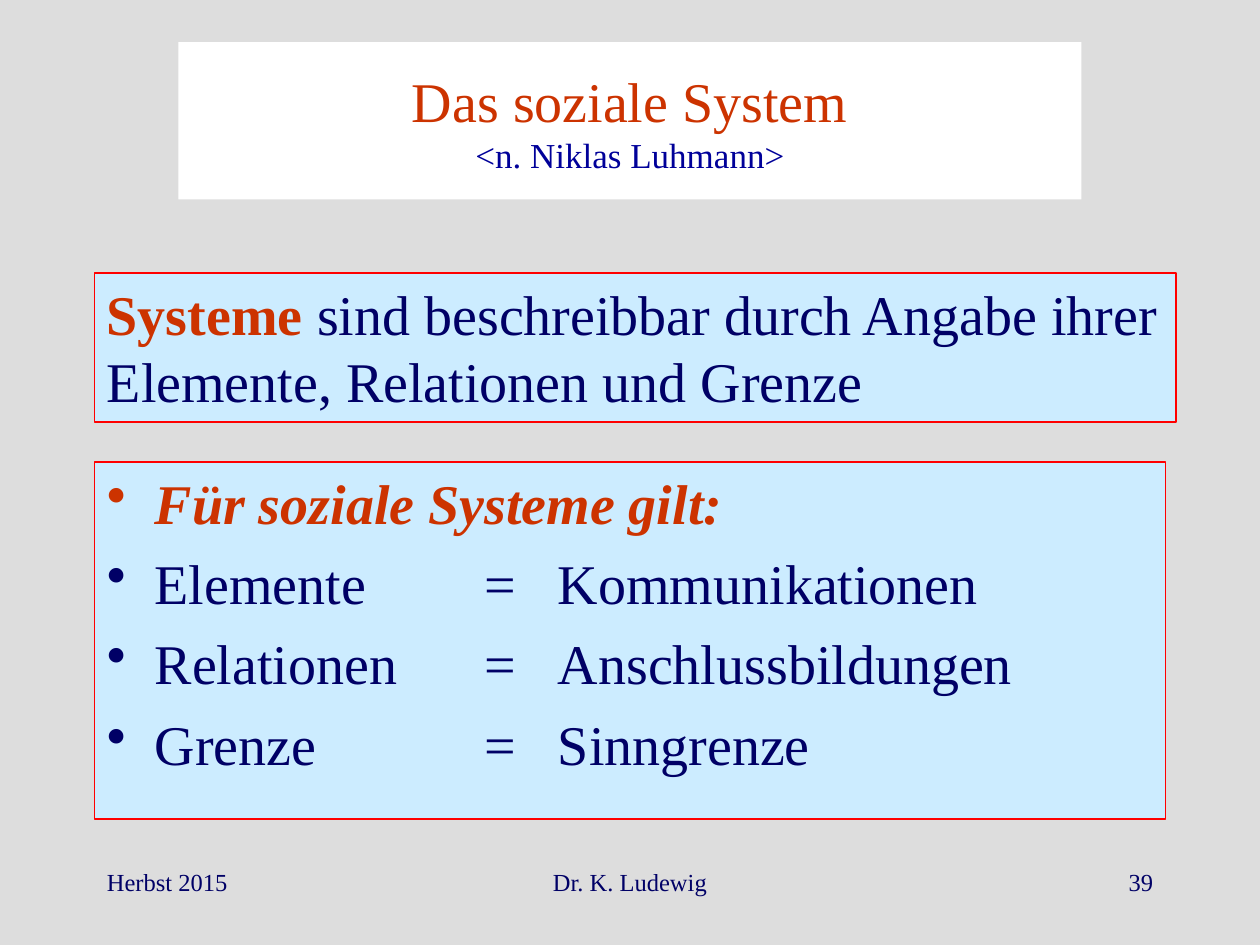
from lxml import etree
from pptx import Presentation
from pptx import util as u
from pptx.dml.color import RGBColor
from pptx.enum import shapes, text
from pptx.oxml.ns import qn

FONT = "Times New Roman"
GREY = RGBColor(0xDD, 0xDD, 0xDD)
WHITE = RGBColor(0xFF, 0xFF, 0xFF)
PALE_BLUE = RGBColor(0xCC, 0xEC, 0xFF)
RED = RGBColor(0xFF, 0x00, 0x00)
RUST = RGBColor(0xCC, 0x33, 0x00)
NAVY = RGBColor(0x00, 0x00, 0x66)
BLUE = RGBColor(0x00, 0x00, 0x99)

WIDTH, HEIGHT = 10, 7.5
COLUMN, ROW = WIDTH / 120, HEIGHT / 45  # layout grid, in inches

ALIGN = text.PP_ALIGN
HANGING = 0.38
TAB_STOPS = (3, 3.58)
RELATIONS = (
    ("Elemente", "Kommunikationen"),
    ("Relationen", "Anschlussbildungen"),
    ("Grenze", "Sinngrenze"),
)


def grid_box(left, top, columns, rows):
    return (u.Inches(left * COLUMN), u.Inches(top * ROW),
            u.Inches(columns * COLUMN), u.Inches(rows * ROW))


def style(font, size, color):
    font.name = FONT
    font.size = u.Pt(size)
    font.color.rgb = color


def add_panel(slide, box, fill, line=None, anchor=text.MSO_ANCHOR.TOP):
    """Add a filled rectangle and return its text frame."""
    shape = slide.shapes.add_shape(shapes.MSO_SHAPE.RECTANGLE, *box)
    shape.shadow.inherit = False
    shape.fill.solid()
    shape.fill.fore_color.rgb = fill
    if line is None:
        shape.line.fill.background()
    else:
        shape.line.color.rgb = line
        shape.line.width = u.Pt(0.75)
    frame = shape.text_frame
    frame.word_wrap = True
    frame.vertical_anchor = anchor
    return frame


def make_bullet(paragraph):
    """Give a paragraph a hanging bullet and the tab stops of the list."""
    properties = paragraph._p.get_or_add_pPr()
    properties.set("marL", str(u.Inches(HANGING)))
    properties.set("indent", str(-u.Inches(HANGING)))
    etree.SubElement(properties, qn("a:buChar"), char="•")
    tabs = etree.SubElement(properties, qn("a:tabLst"))
    for stop in TAB_STOPS:
        etree.SubElement(tabs, qn("a:tab"), pos=str(u.Inches(stop)), algn="l")


def add_title(slide, box):
    frame = add_panel(slide, box, WHITE, anchor=text.MSO_ANCHOR.MIDDLE)
    paragraph = frame.paragraphs[0]
    paragraph.alignment = ALIGN.CENTER
    heading = paragraph.add_run()
    heading.text = "Das soziale System"
    style(heading.font, 32, RUST)
    paragraph.add_line_break()
    source = paragraph.add_run()
    source.text = "<n. Niklas Luhmann>"
    style(source.font, 20, BLUE)


def add_definition(slide, box):
    paragraph = add_panel(slide, box, PALE_BLUE, RED).paragraphs[0]
    paragraph.alignment = ALIGN.LEFT
    term = paragraph.add_run()
    term.text = "Systeme "
    style(term.font, 32, RUST)
    term.font.bold = True
    rest = paragraph.add_run()
    rest.text = ("sind beschreibbar durch Angabe ihrer "
                 "Elemente, Relationen und Grenze")
    style(rest.font, 32, NAVY)


def add_relations(slide, box):
    frame = add_panel(slide, box, PALE_BLUE, RED)
    heading = frame.paragraphs[0]
    heading.text = "Für soziale Systeme gilt:"
    style(heading.font, 32, RUST)
    heading.font.bold = heading.font.italic = True
    for name, meaning in RELATIONS:
        paragraph = frame.add_paragraph()
        paragraph.text = f"{name}\t=\t{meaning}"
        paragraph.space_before = u.Pt(7.5)
        style(paragraph.font, 32, NAVY)
    for paragraph in frame.paragraphs:
        paragraph.alignment = ALIGN.LEFT
        make_bullet(paragraph)


def add_footer(slide, top, rows):
    parts = (
        (9, 25, "Herbst 2015", ALIGN.LEFT),
        (41, 38, "Dr. K. Ludewig", ALIGN.CENTER),
        (86, 25, "39", ALIGN.RIGHT),
    )
    for left, columns, words, alignment in parts:
        frame = slide.shapes.add_textbox(
            *grid_box(left, top, columns, rows)).text_frame
        frame.word_wrap = True
        paragraph = frame.paragraphs[0]
        paragraph.text = words
        paragraph.alignment = alignment
        style(paragraph.font, 14, NAVY)


def main():
    presentation = Presentation()
    presentation.slide_width = u.Inches(WIDTH)
    presentation.slide_height = u.Inches(HEIGHT)
    slide = presentation.slides.add_slide(presentation.slide_layouts[6])
    slide.background.fill.solid()
    slide.background.fill.fore_color.rgb = GREY

    add_footer(slide, 41, 3)
    add_relations(slide, grid_box(9, 22, 102, 17))
    add_title(slide, grid_box(17, 2, 86, 7.5))
    add_definition(slide, grid_box(9, 13, 103, 7.1))
    presentation.save("out.pptx")


if __name__ == "__main__":
    main()
